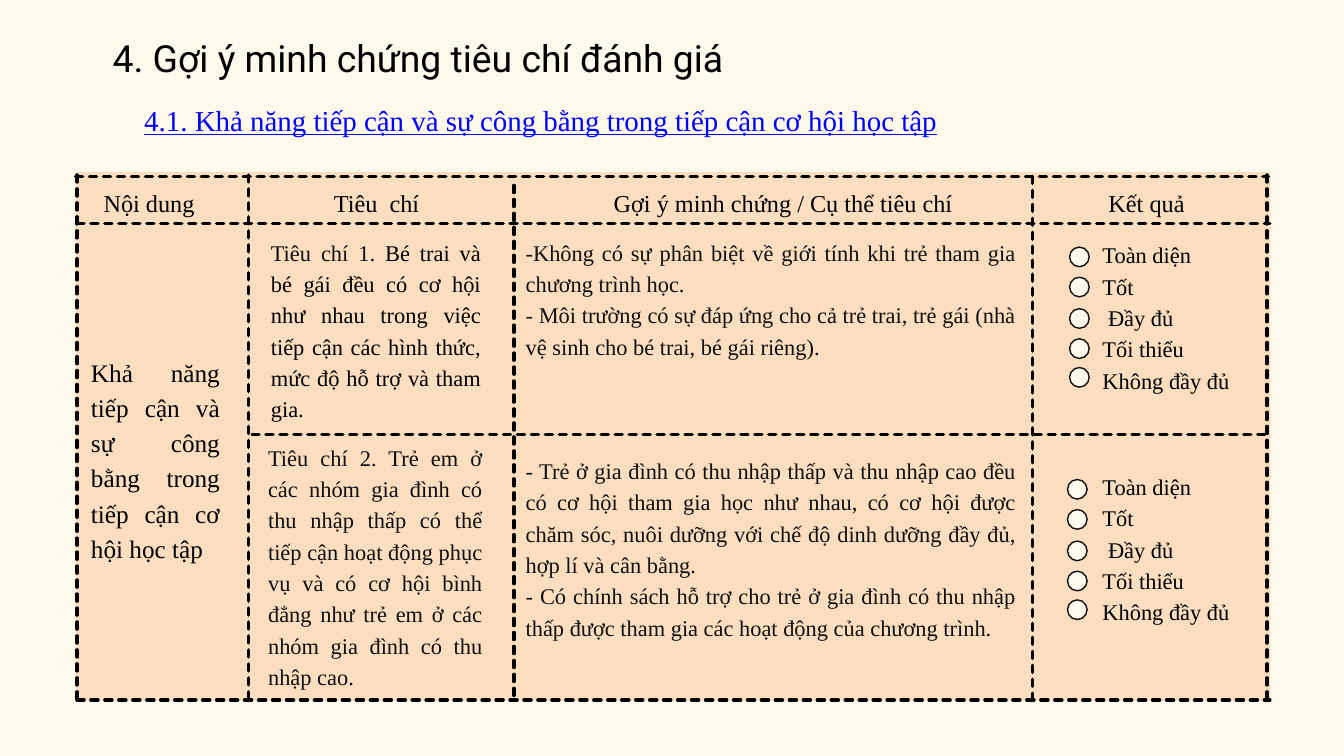
from lxml import etree
from pptx import Presentation
from pptx.dml.color import RGBColor
from pptx.enum.dml import MSO_LINE as Dash
from pptx.enum.shapes import MSO_CONNECTOR as Connector, MSO_SHAPE as Shape
from pptx.enum.text import MSO_ANCHOR as Anchor, MSO_AUTO_SIZE as AutoSize, PP_ALIGN as Align
from pptx.oxml.ns import qn
from pptx.util import Emu, Pt

EMU_PER_PX = 9525
SERIF = "Times New Roman"
CREAM, PEACH, BLACK, INK, BLUE = "FDFAED", "FBDEBF", "000000", "100F0D", "0000FF"

COLUMNS = [110, 355, 734, 1475, 1810]
ROWS = [252, 319, 621, 1000]
# Start and end of the rule on each row and column edge
ROW_RULES = [(108, 1812), (110, 1814), (360, 1812), (110, 1814)]
COLUMN_RULES = [(250, 1003), (250, 1000), (265, 997), (252, 997), (250, 997)]
# text, left, width
HEADINGS = [
    ("Nội dung", 135, 156),
    ("Tiêu  chí", 459, 158),
    ("Gợi ý minh chứng / Cụ thể tiêu chí", 860, 518),
    ("Kết quả", 1579, 118),
]
TOPIC = "Khả năng tiếp cận và sự công bằng trong tiếp cận cơ hội học tập"
RATINGS = ["Toàn diện", "Tốt", " Đầy đủ", "Tối thiểu", "Không đầy đủ"]
CIRCLE_STEPS = [0, 43, 88, 131, 172]
# criterion runs, (left, top, width), evidence, top, ratings top, first circle (left, top)
CRITERIA = [
    ([("Tiêu chí 1. ", INK),
      ("Bé trai và bé gái đều có cơ hội như nhau trong việc tiếp cận các hình thức, "
       "mức độ hỗ trợ và tham gia.", BLACK)], (387, 335, 300),
     ["-Không có sự phân biệt về giới tính khi trẻ tham gia chương trình học.",
      "- Môi trường có sự đáp ứng cho cả trẻ trai, trẻ gái (nhà vệ sinh cho bé trai, "
      "bé gái riêng)."], 335, 339, (1528, 353)),
    ([("Tiêu chí 2. Trẻ em ở các nhóm gia đình có thu nhập thấp có thể tiếp cận hoạt động "
       "phục vụ và có cơ hội bình đẳng như trẻ em ở các nhóm gia đình có thu nhập cao.", INK)],
     (383, 628, 306),
     ["- Trẻ ở gia đình có thu nhập thấp và thu nhập cao đều có cơ hội tham gia học như nhau, "
      "có cơ hội được chăm sóc, nuôi dưỡng với chế độ dinh dưỡng đầy đủ, hợp lí và cân bằng.",
      "- Có chính sách hỗ trợ cho trẻ ở gia đình có thu nhập thấp được tham gia các hoạt động "
      "của chương trình."], 647, 670, (1525, 685)),
]


def px(length):
    return Emu(length * EMU_PER_PX)


def rgb(value):
    return RGBColor.from_string(value)


def write(frame, paragraphs, size=24, color=BLACK, font=SERIF, align=Align.LEFT, underline=None):
    """Each paragraph is a string or a list of (text, color) runs."""
    frame.word_wrap = True
    for index, runs in enumerate(paragraphs):
        para = frame.add_paragraph() if index else frame.paragraphs[0]
        para.alignment = align
        para.line_spacing = Pt(round(size * 1.4, 1))
        para.space_before = para.space_after = Pt(0)
        for text, run_color in [(runs, color)] if isinstance(runs, str) else runs:
            span = para.add_run()
            span.text = text
            span.font.name, span.font.size = font, Pt(size)
            span.font.underline = underline
            span.font.color.rgb = rgb(run_color)


class Page:
    rule_width, rule_color = Pt(3.75), BLACK

    def __init__(self, deck):
        self.slide = deck.slides.add_slide(deck.slide_layouts[5])
        self.slide.background.fill.solid()
        self.slide.background.fill.fore_color.rgb = rgb(CREAM)

    def place_text(self, box, left, top, width, height, paragraphs, **style):
        box.left, box.top, box.width, box.height = map(px, (left, top, width, height))
        frame = box.text_frame
        frame.margin_left = frame.margin_right = frame.margin_top = frame.margin_bottom = 0
        frame.vertical_anchor = Anchor.TOP
        frame.auto_size = AutoSize.NONE
        write(frame, paragraphs, **style)

    def title(self, *place, **style):
        self.place_text(self.slide.shapes.title, *place, **style)

    def text(self, *place, **style):
        self.place_text(self.slide.shapes.add_textbox(0, 0, 0, 0), *place, **style)

    def shape(self, kind, left, top, width, height, fill, line=None):
        shape = self.slide.shapes.add_shape(kind, *map(px, (left, top, width, height)))
        shape.shadow.inherit = False
        shape.fill.solid()
        shape.fill.fore_color.rgb = rgb(fill)
        if line:
            shape.line.color.rgb = rgb(line)
            shape.line.width = Pt(1.5)
        else:
            shape.line.fill.background()

    def rule(self, *ends):
        """Draw a dashed line with round caps."""
        rule = self.slide.shapes.add_connector(Connector.STRAIGHT, *map(px, ends))
        rule.line.width = self.rule_width
        rule.line.color.rgb = rgb(self.rule_color)
        rule.line.dash_style = Dash.SQUARE_DOT
        properties = rule._element.spPr
        properties.find(qn("a:ln")).set("cap", "rnd")
        etree.SubElement(properties, qn("a:effectLst"))

    def table(self, columns, rows):
        left, top = columns[0], rows[0]
        size = px(columns[-1] - left), px(rows[-1] - top)
        table = self.slide.shapes.add_table(
            len(rows) - 1, len(columns) - 1, px(left), px(top), *size).table
        table.first_row = table.horz_banding = False
        for column, start, end in zip(table.columns, columns, columns[1:]):
            column.width = px(end - start)
        for row, start, end in zip(table.rows, rows, rows[1:]):
            row.height = px(end - start)
        for cell in table.iter_cells():
            self.clear(cell)
        return table

    def clear(self, cell):
        """Remove the fill and borders that come with the table style."""
        cell.fill.background()
        properties = cell._tc.get_or_add_tcPr()
        for index, side in enumerate("LRTB"):
            border = etree.Element(qn(f"a:ln{side}"))
            etree.SubElement(border, qn("a:noFill"))
            properties.insert(index, border)

    def cell(self, table, row, column, left, top, width, paragraphs, bottom=0,
             anchor=Anchor.TOP, **style):
        """Set the margins so that the text fills the given span of the slide."""
        cell = table.cell(row, column)
        cell.margin_left = px(left - COLUMNS[column])
        cell.margin_right = px(COLUMNS[column + 1] - left - width)
        cell.margin_top, cell.margin_bottom = px(top - ROWS[row]), px(bottom)
        cell.vertical_anchor = anchor
        write(cell.text_frame, paragraphs, **style)


def main():
    deck = Presentation()
    deck.slide_width, deck.slide_height = px(1920), px(1080)
    page = Page(deck)

    # Headings
    page.title(161, 39, 1517, 72, ["4. Gợi ý minh chứng tiêu chí đánh giá"],
               size=40, font="Roboto")
    page.text(206, 138, 1601, 58,
              ["4.1. Khả năng tiếp cận và sự công bằng trong tiếp cận cơ hội học tập"],
              size=31, color=BLUE, align=Align.JUSTIFY, underline=True)

    # Panel and table
    page.shape(Shape.RECTANGLE, 109, 246, 1706, 755, PEACH)
    table = page.table(COLUMNS, ROWS)
    table.cell(1, 0).merge(table.cell(2, 0))

    # Dashed grid
    for y, (start, end) in zip(ROWS, ROW_RULES):
        page.rule(start, y, end, y)
    for x, (start, end) in zip(COLUMNS, COLUMN_RULES):
        page.rule(x, start, x, end)

    # Header row and topic
    for column, (heading, left, width) in enumerate(HEADINGS):
        page.cell(table, 0, column, left, 262, width, [heading], size=26, align=Align.CENTER)
    page.cell(table, 1, 0, 130, ROWS[1], 184, [TOPIC], bottom=10, anchor=Anchor.MIDDLE,
              size=27, align=Align.JUSTIFY)

    # Criteria, evidence and rating choices
    for row, (runs, place, evidence, evidence_top, ratings_top, circle) in enumerate(CRITERIA, 1):
        page.cell(table, row, 1, *place, [runs], align=Align.JUSTIFY)
        page.cell(table, row, 2, 751, evidence_top, 700, evidence, color=INK, align=Align.JUSTIFY)
        page.cell(table, row, 3, 1575, ratings_top, 199, RATINGS)
        for step in CIRCLE_STEPS:
            page.shape(Shape.OVAL, circle[0], circle[1] + step, 28, 28, CREAM, line=INK)

    deck.save("out.pptx")


if __name__ == "__main__":
    main()
